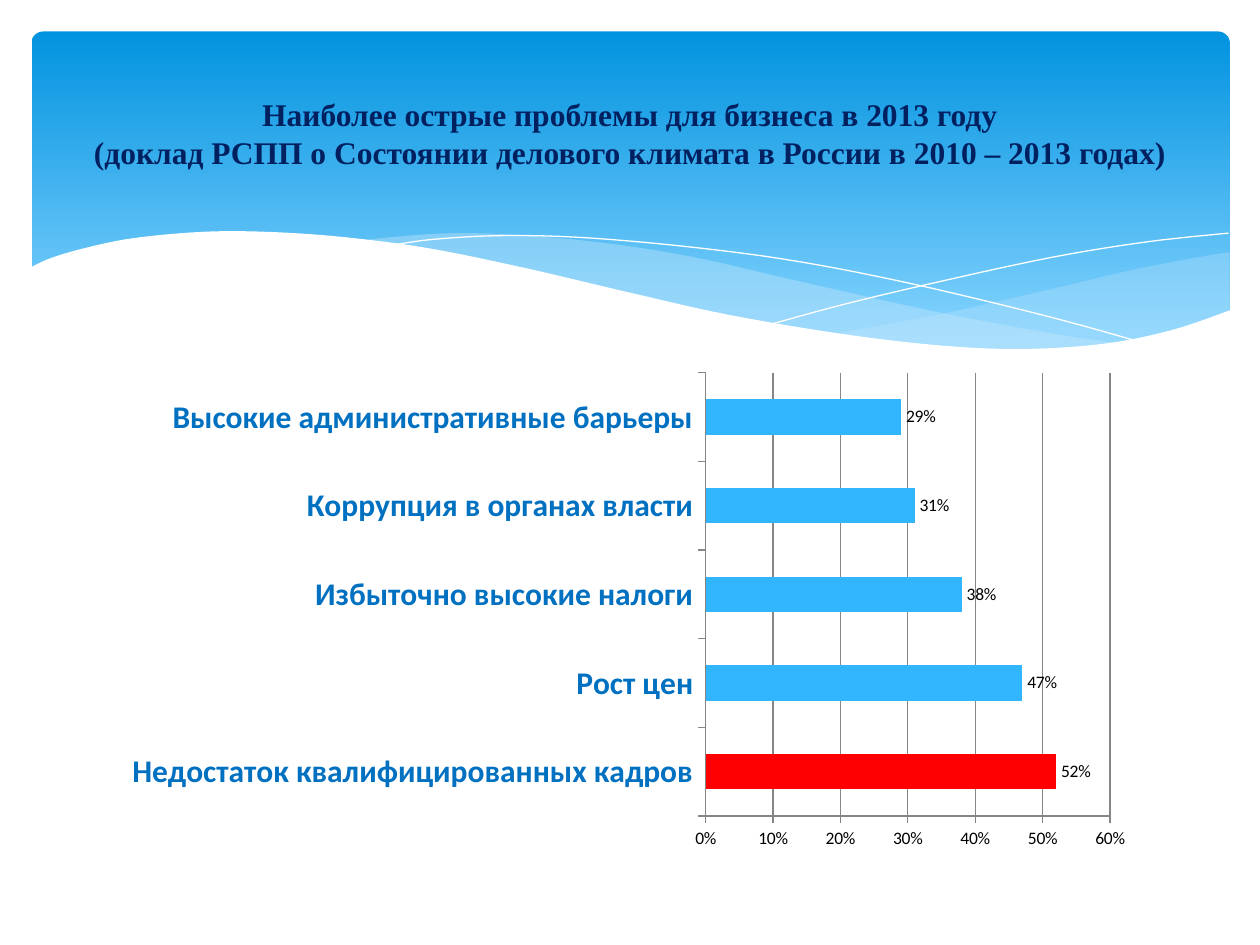
from lxml import etree
from pptx import Presentation
from pptx.chart.data import CategoryChartData
from pptx.dml.color import RGBColor
from pptx.enum.chart import XL_CHART_TYPE, XL_LABEL_POSITION, XL_TICK_MARK
from pptx.enum.shapes import MSO_SHAPE
from pptx.enum.text import MSO_ANCHOR, PP_ALIGN
from pptx.oxml import parse_xml
from pptx.oxml.ns import nsdecls, qn
from pptx.util import Inches, Pt

BAR = XL_CHART_TYPE.BAR_CLUSTERED
END = XL_LABEL_POSITION.OUTSIDE_END
OUT = XL_TICK_MARK.OUTSIDE
ROUND = MSO_SHAPE.ROUNDED_RECTANGLE
MIDDLE = MSO_ANCHOR.MIDDLE
CENTER = PP_ALIGN.CENTER

DEEP = RGBColor(0x02, 0x93, 0xE0)
PALE = RGBColor(0x83, 0xD3, 0xFE)
MIST = RGBColor(0xC6, 0xE7, 0xFC)
WHITE = RGBColor(0xFF, 0xFF, 0xFF)
BLACK = RGBColor(0, 0, 0)
GRAY = RGBColor(0x86, 0x86, 0x86)
NAVY = RGBColor(0x00, 0x20, 0x60)
BLUE = RGBColor(0x00, 0x70, 0xC0)
SKY = RGBColor(0x31, 0xB6, 0xFD)
RED = RGBColor(0xFF, 0, 0)

WIDE, HIGH = 10, 7.5
TITLE = ("Наиболее острые проблемы для бизнеса в 2013 году\v"
         "(доклад РСПП о Состоянии делового климата в России в 2010 – 2013 годах)")
ISSUES = {
    "Недостаток квалифицированных кадров": 0.52,
    "Рост цен": 0.47,
    "Избыточно высокие налоги": 0.38,
    "Коррупция в органах власти": 0.31,
    "Высокие административные барьеры": 0.29,
}
PLOT = {"x": 0.57, "y": 0.02, "w": 0.39, "h": 0.9}

RIGHT_TOP = [(9.76, 2), (9.35, 2.07), (8.91, 2.16), (8.32, 2.3),
             (7.53, 2.48), (7.06, 2.57), (6.61, 2.65)]
RIGHT_LOW = [(6.61, 2.65), (7.05, 2.71), (7.57, 2.76), (8.03, 2.78),
             (8.54, 2.76), (8.97, 2.7), (9.35, 2.62), (9.76, 2.47)]
LEFT_TOP = [(8.93, 2.73), (8.37, 2.65), (7.41, 2.47), (6.29, 2.22),
            (5.55, 2.05), (4.89, 1.94), (4.2, 1.87), (3.61, 1.85),
            (3.13, 1.88), (2.86, 1.91)]
LEFT_LOW = [(2.86, 1.91), (3.42, 1.99), (4.04, 2.11), (4.91, 2.32),
            (5.66, 2.48), (6.5, 2.64), (7.22, 2.74), (7.85, 2.78),
            (8.38, 2.78), (8.93, 2.73)]
FALL = [(3.09, 1.95), (3.44, 1.9), (4.01, 1.87), (4.69, 1.89),
        (5.56, 1.97), (6.36, 2.08), (7.27, 2.26), (8.31, 2.51), (9.07, 2.72)]
RISE = [(6.13, 2.57), (6.72, 2.41), (7.48, 2.23), (8.36, 2.04),
        (9.1, 1.92), (9.75, 1.85)]
WAVE = [(9.77, 2.46), (9.3, 2.62), (8.75, 2.73), (8.09, 2.77), (7.44, 2.74),
        (6.68, 2.65), (5.79, 2.5), (5.03, 2.33), (4.18, 2.13), (3.4, 1.97),
        (2.71, 1.88), (2.11, 1.84), (1.61, 1.84), (1.06, 1.89), (0.67, 1.97),
        (0.4, 2.05), (0.23, 2.13)]


def smooth(knots, steps=6):
    """Return points on a Catmull-Rom curve through the knots."""
    ends = [knots[0], *knots, knots[-1]]
    dots = [knots[0]]
    for a, b, c, d in zip(ends, ends[1:], ends[2:], ends[3:]):
        for i in range(1, steps + 1):
            t = i / steps
            dots.append(tuple(
                q + t * (r - p) / 2
                + t ** 2 * (2 * p - 5 * q + 4 * r - s) / 2
                + t ** 3 * (3 * q - p - 3 * r + s) / 2
                for p, q, r, s in zip(a, b, c, d)))
    return dots


def add_path(slide, dots, closed):
    """Draw a plain outline through points given in inches."""
    first, *rest = [(Inches(x), Inches(y)) for x, y in dots]
    pen = slide.shapes.build_freeform(*first)
    pen.add_line_segments(rest, close=closed)
    shape = pen.convert_to_shape()
    shape.shadow.inherit = False
    return shape


def add_area(slide, dots, color, share=100):
    """Fill an outline with a colour at the given opacity."""
    shape = add_path(slide, dots, True)
    shape.fill.solid()
    shape.fill.fore_color.rgb = color
    shape.line.fill.background()
    if share < 100:
        tint = shape.fill._xPr.find(qn("a:solidFill"))[0]
        etree.SubElement(tint, qn("a:alpha"), val=str(share * 1000))


def add_curve(slide, knots):
    """Draw a white hairline curve."""
    shape = add_path(slide, smooth(knots), False)
    shape.fill.background()
    shape.line.color.rgb = WHITE
    shape.line.width = Pt(0)


def add_banner(slide):
    """Draw the gradient banner with its ribbons and white wave."""
    box = slide.shapes.add_shape(
        ROUND, Inches(0.25), Inches(0.25), Inches(WIDE - 0.49), Inches(2.7))
    box.adjustments[0] = 0.034
    box.shadow.inherit = False
    box.line.fill.background()
    box.fill.gradient()
    box.fill.gradient_angle = 270
    for stop, place, color in zip(box.fill.gradient_stops, (0, 0.9), (DEEP, PALE)):
        stop.position = place
        stop.color.rgb = color
    add_area(slide, smooth(RIGHT_TOP) + smooth(RIGHT_LOW), MIST, 29)
    add_area(slide, smooth(LEFT_TOP) + smooth(LEFT_LOW), MIST, 40)
    add_curve(slide, FALL)
    add_curve(slide, RISE)
    add_area(slide, smooth(WAVE) + [(0.23, 3.29), (9.77, 3.29)], WHITE)


def set_font(font, name, size, color, bold=False):
    """Set the look of a font."""
    font.name, font.size, font.bold = name, Pt(size), bold
    font.color.rgb = color


def set_plot(chart):
    """Fix the inner plot area as shares of the chart."""
    modes = "".join(f'<c:{k}Mode val="edge"/>' for k in "xy")
    sizes = "".join(f'<c:{k} val="{v}"/>' for k, v in PLOT.items())
    area = chart._chartSpace.chart.plotArea
    for old in area.findall(qn("c:layout")):
        area.remove(old)
    area.insert(0, parse_xml(
        f'<c:layout {nsdecls("c")}><c:manualLayout><c:layoutTarget val="inner"/>'
        f'{modes}{sizes}</c:manualLayout></c:layout>'))


def add_bars(slide):
    """Add the bar chart of business problems."""
    data = CategoryChartData(number_format="0%")
    data.categories = list(ISSUES)
    data.add_series("Series 1", list(ISSUES.values()))
    chart = slide.shapes.add_chart(
        BAR, Inches(0.91), Inches(2.88), Inches(8.23), Inches(3.91), data).chart
    chart.has_legend = chart.has_title = False
    set_font(chart.font, "Calibri", 10, BLACK)
    set_plot(chart)
    cats, vals = chart.category_axis, chart.value_axis
    for axis in (cats, vals):
        axis.major_tick_mark = OUT
        axis.format.line.color.rgb = GRAY
    set_font(cats.tick_labels.font, "Calibri", 18, BLUE, True)
    vals.minimum_scale, vals.maximum_scale, vals.major_unit = 0, 0.6, 0.1
    vals.major_gridlines.format.line.color.rgb = GRAY
    vals.tick_labels.number_format = "0%"
    vals.tick_labels.number_format_is_linked = False
    plot = chart.plots[0]
    plot.gap_width = 150
    plot.vary_by_categories = False
    bars = plot.series[0]
    for part, color in ((bars, SKY), (bars.points[0], RED)):
        part.format.fill.solid()
        part.format.fill.fore_color.rgb = color
    labels = bars.data_labels
    labels.show_value = True
    labels.position = END
    labels.number_format = "0%"
    labels.number_format_is_linked = False


def add_title(slide):
    """Place the title in front of the banner."""
    title = slide.shapes.title
    title.left, title.top = Inches(0.5), Inches(0.37)
    title.width, title.height = Inches(WIDE - 1), Inches(1.37)
    frame = title.text_frame
    frame.text = TITLE
    frame.word_wrap = True
    frame.vertical_anchor = MIDDLE
    line = frame.paragraphs[0]
    line.alignment = CENTER
    set_font(line.font, "Times New Roman", 18, NAVY, True)
    slide.shapes._spTree.append(title._element)


def main():
    """Build and save the slide."""
    deck = Presentation()
    deck.slide_width, deck.slide_height = Inches(WIDE), Inches(HIGH)
    slide = deck.slides.add_slide(deck.slide_layouts[5])
    add_banner(slide)
    add_bars(slide)
    add_title(slide)
    deck.save("out.pptx")


if __name__ == "__main__":
    main()
